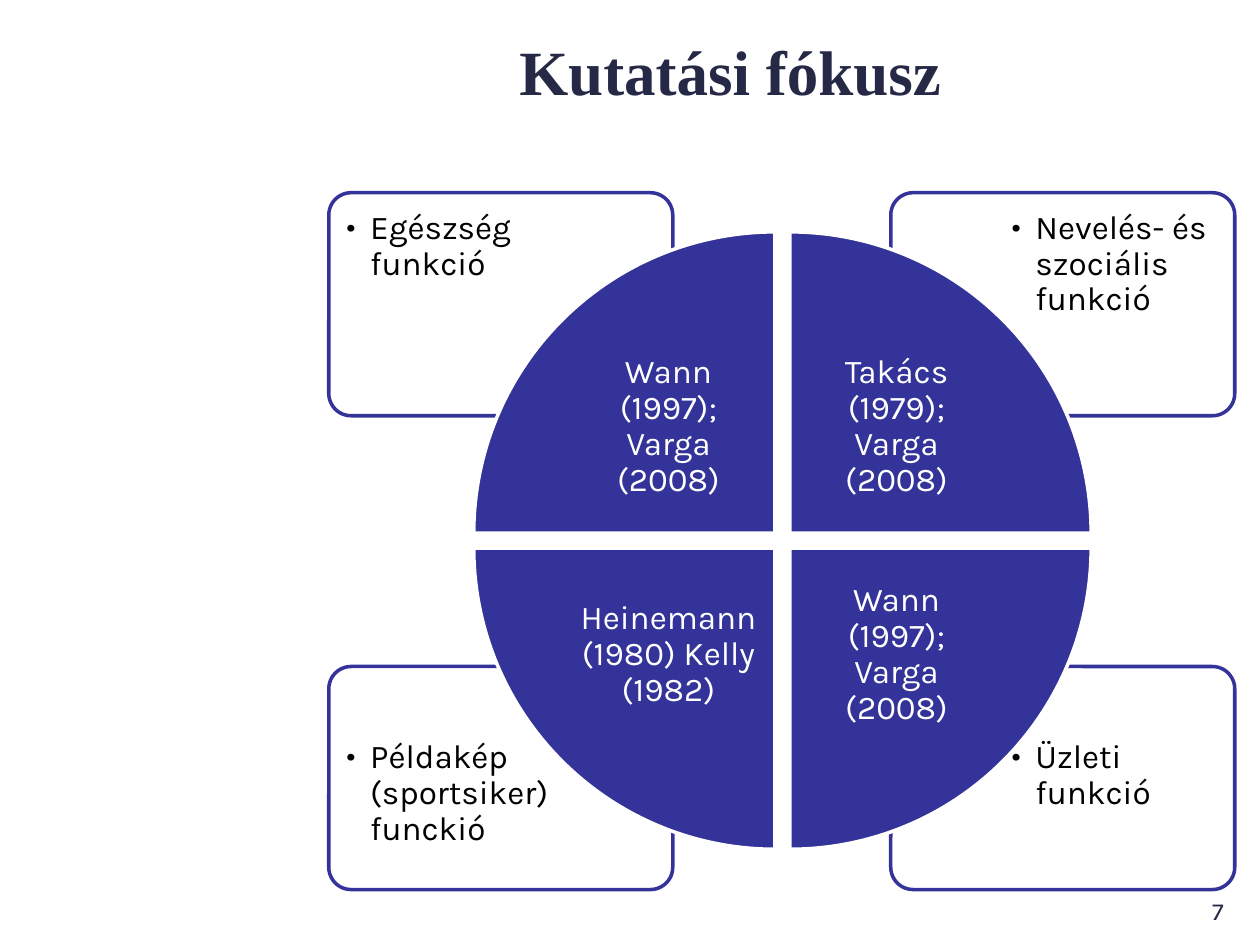
from dataclasses import dataclass

from lxml import etree
from pptx import Presentation
from pptx.dml.color import RGBColor
from pptx.enum.shapes import MSO_SHAPE
from pptx.enum.text import MSO_ANCHOR, PP_ALIGN
from pptx.oxml.ns import qn
from pptx.util import Inches, Pt

ROUNDED = MSO_SHAPE.ROUNDED_RECTANGLE
WEDGE = MSO_SHAPE.PIE_WEDGE
TOP, MIDDLE = MSO_ANCHOR.TOP, MSO_ANCHOR.MIDDLE
LEFT, CENTER, RIGHT = PP_ALIGN.LEFT, PP_ALIGN.CENTER, PP_ALIGN.RIGHT


@dataclass(frozen=True)
class Theme:
    """Colours, fonts and type sizes of the deck."""
    ink: RGBColor = RGBColor.from_string("252946")
    accent: RGBColor = RGBColor.from_string("333399")
    white: RGBColor = RGBColor.from_string("FFFFFF")
    black: RGBColor = RGBColor.from_string("000000")
    title_font: str = "Times New Roman"
    body_font: str = "Karla"
    title_size: int = 36
    body_size: int = 19
    number_size: int = 14
    line_width: int = 2


THEME = Theme()
QUADRANTS = [
    (0, 0, 0, "Egészség funkció", "Wann (1997); Varga (2008)"),
    (0, 1, 90, "Nevelés- és szociális funkció", "Takács (1979); Varga (2008)"),
    (1, 1, 180, "Üzleti funkció", "Wann (1997); Varga (2008)"),
    (1, 0, 270, "Példakép (sportsiker) funckió", "Heinemann (1980) Kelly (1982)"),
]
CARD_SIZE = (2.73, 1.77)
CARD_TEXT_SIZE = (1.83, 1.25)
CARD_PAD = 0.04
WEDGE_SIZE = 2.39
LABEL_SIZE = 1.69
LABEL_INSET = 0.13


def place(shape, box):
    """Move a shape to a left, top, width, height box in inches."""
    shape.left, shape.top, shape.width, shape.height = map(Inches, box)


def add_span(para, text, size, color, font=THEME.body_font, bold=False):
    """Add one formatted run to a paragraph."""
    span = para.add_run()
    span.text = text
    span.font.size = Pt(size)
    span.font.name = font
    span.font.bold = bold
    span.font.color.rgb = color


def add_text(page, box, text, size, color, align, anchor=TOP, inset=None):
    """Add a wrapping text box and return its paragraph."""
    frame = page.shapes.add_textbox(*map(Inches, box)).text_frame
    frame.word_wrap = True
    frame.vertical_anchor = anchor
    if inset is not None:
        frame.margin_left = frame.margin_right = Inches(inset)
        frame.margin_top = frame.margin_bottom = Inches(inset)
    para = frame.paragraphs[0]
    para.alignment = align
    add_span(para, text, size, color)
    return para


def add_bullet(para):
    """Give a paragraph a hanging round bullet in the body font."""
    properties = para._p.get_or_add_pPr()
    properties.set("marL", str(Inches(0.19)))
    properties.set("indent", str(Inches(-0.19)))
    etree.SubElement(properties, qn("a:buFont")).set("typeface", THEME.body_font)
    etree.SubElement(properties, qn("a:buChar")).set("char", "•")


def add_outlined(page, kind, box, fill, line):
    """Add a flat preset shape with a solid fill and outline."""
    shape = page.shapes.add_shape(kind, *map(Inches, box))
    shape.shadow.inherit = False
    shape.fill.solid()
    shape.fill.fore_color.rgb = fill
    shape.line.color.rgb = line
    shape.line.width = Pt(THEME.line_width)
    return shape


def add_title(page, box):
    """Place and format the slide title."""
    title = page.shapes.title
    place(title, box)
    title.text_frame.vertical_anchor = MIDDLE
    para = title.text_frame.paragraphs[0]
    para.alignment = CENTER
    add_span(para, "Kutatási fókusz", THEME.title_size, THEME.ink,
             THEME.title_font, True)


def add_card(page, box, row, column, text):
    """Add a corner card whose text sits at its outer corner."""
    left, top, width, height = box
    card = add_outlined(page, ROUNDED, box, THEME.white, THEME.accent)
    card.adjustments[0] = 0.1
    text_width, text_height = CARD_TEXT_SIZE
    text_left = left + (width - text_width - CARD_PAD if column else CARD_PAD)
    text_top = top + (height - text_height - CARD_PAD if row else CARD_PAD)
    para = add_text(page, (text_left, text_top, text_width, text_height), text,
                    THEME.body_size, THEME.black, LEFT, inset=0.1)
    para.line_spacing = 0.9
    add_bullet(para)


def add_wedge(page, box, row, column, rotation, text):
    """Add a quarter of the circle with its label near the centre."""
    left, top, width, height = box
    wedge = add_outlined(page, WEDGE, box, THEME.accent, THEME.white)
    wedge.rotation = rotation
    label_left = left + (0 if column else width - LABEL_SIZE)
    label_top = top + (0 if row else height - LABEL_SIZE)
    para = add_text(page, (label_left, label_top, LABEL_SIZE, LABEL_SIZE), text,
                    THEME.body_size, THEME.white, CENTER, MIDDLE, LABEL_INSET)
    para.line_spacing = 0.9


def add_cycle(page, box):
    """Add four corner cards with a quartered circle over them."""
    left, top, width, height = box
    card_width, card_height = CARD_SIZE
    wedge_left, wedge_top = left + 1.15, top + 0.31
    wedge_step = 2.51
    for row, column, _, function, _ in QUADRANTS:
        card_box = (left + column * (width - card_width),
                    top + row * (height - card_height), card_width, card_height)
        add_card(page, card_box, row, column, function)
    for row, column, rotation, _, source in QUADRANTS:
        wedge_box = (wedge_left + column * wedge_step,
                     wedge_top + row * wedge_step, WEDGE_SIZE, WEDGE_SIZE)
        add_wedge(page, wedge_box, row, column, rotation, source)


def main():
    """Build and save the deck."""
    deck = Presentation()
    deck.slide_width, deck.slide_height = Inches(10), Inches(7.5)
    page = deck.slides.add_slide(deck.slide_layouts[5])
    add_title(page, (2.09, 0.04, 7.41, 1.04))
    add_text(page, (7.17, 7.06, 2.64, 0.29), "7", THEME.number_size,
             THEME.ink, RIGHT)
    add_cycle(page, (2.61, 1.53, 7.19, 5.53))
    deck.save("out.pptx")


if __name__ == "__main__":
    main()
